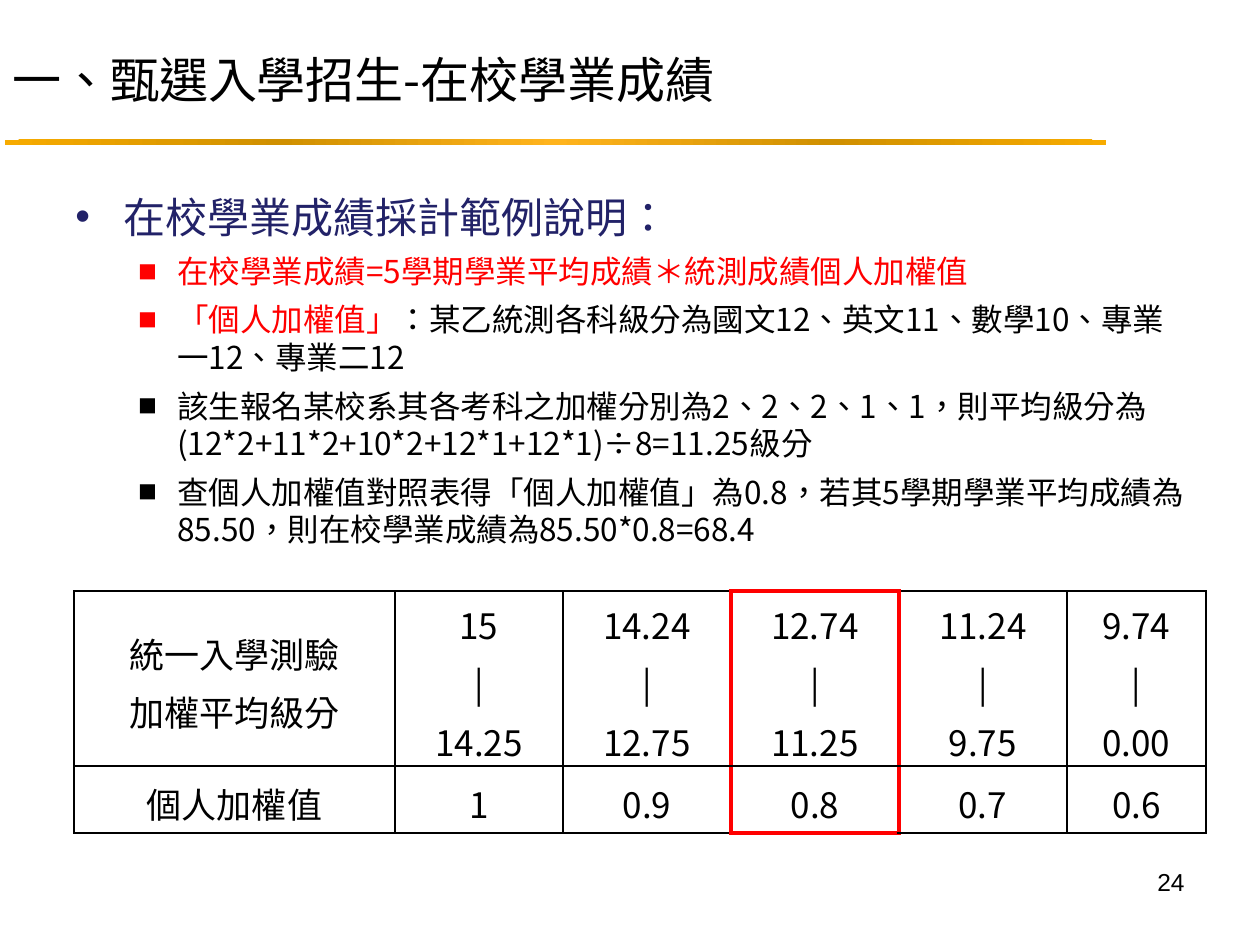
from lxml import etree
from pptx import Presentation
from pptx.dml.color import RGBColor
from pptx.enum.shapes import MSO_SHAPE as Shape
from pptx.enum.text import MSO_ANCHOR as Anchor, PP_ALIGN as Align
from pptx.oxml import parse_xml
from pptx.oxml.ns import nsdecls, qn
from pptx.util import Pt

PX = 914400 // 126
CJK, LATIN = "Noto Sans CJK SC", "Arial"
COLORS = {
    "black": "000000", "red": "FF0000", "navy": "222268",
    "bar_center": "FFB41D", "bar_middle": "D09000", "bar_edge": "F7AB00",
}

# Each point is a list of (text, colour) runs
HEADING = "在校學業成績採計範例說明："
POINTS = [
    [("在校學業成績=5學期學業平均成績＊統測成績個人加權值", "red")],
    [("「個人加權值」", "red"),
     ("：某乙統測各科級分為國文12、英文11、數學10、專業一12、專業二12", "black")],
    [("該生報名某校系其各考科之加權分別為2、2、2、1、1，則平均級分為"
      "(12*2+11*2+10*2+12*1+12*1)÷8=11.25級分", "black")],
    [("查個人加權值對照表得「個人加權值」為0.8，若其5學期學業平均成績為85.50，"
      "則在校學業成績為85.50*0.8=68.4", "black")],
]
ROWS = [
    ["統一入學測驗\n加權平均級分", "15\n|\n14.25", "14.24\n|\n12.75",
     "12.74\n|\n11.25", "11.24\n|\n9.75", "9.74\n|\n0.00"],
    ["個人加權值", "1", "0.9", "0.8", "0.7", "0.6"],
]
COLUMN_WIDTHS = [321, 168, 168, 168, 168, 139]
ROW_HEIGHTS = [175, 67]
MARKED_COLUMN = 3


def px(*lengths):
    return [length * PX for length in lengths]


def style_run(run, size, color="black", font=CJK):
    run.font.size = Pt(size)
    run.font.name = font
    run.font.color.rgb = RGBColor.from_string(COLORS[color])
    properties = run.font._element
    properties.set("lang", "zh-TW")
    etree.SubElement(properties, qn("a:ea")).set("typeface", font)


def add_text_box(slide, box, anchor=Anchor.TOP):
    frame = slide.shapes.add_textbox(*px(*box)).text_frame
    frame.word_wrap = True
    frame.vertical_anchor = anchor
    return frame


def add_line_of_text(slide, box, text, size, font=CJK, align=Align.LEFT, anchor=Anchor.TOP):
    frame = add_text_box(slide, box, anchor)
    frame.text = text
    paragraph = frame.paragraphs[0]
    paragraph.alignment = align
    style_run(paragraph.runs[0], size, font=font)


def add_bar(slide, box):
    bar = slide.shapes.add_shape(Shape.RECTANGLE, *px(*box))
    bar.shadow.inherit = False
    bar.line.fill.background()
    stops = "".join(
        f'<a:gs pos="{position}"><a:srgbClr val="{COLORS[name]}"/></a:gs>'
        for position, name in ((0, "bar_center"), (50000, "bar_middle"), (100000, "bar_edge")))
    gradient = parse_xml(
        f'<a:gradFill {nsdecls("a")}><a:gsLst>{stops}</a:gsLst><a:path path="circle">'
        '<a:fillToRect l="50000" t="50000" r="50000" b="50000"/></a:path></a:gradFill>')
    bar._element.spPr.find(qn("a:prstGeom")).addnext(gradient)


def add_bullet(paragraph, character, font, scale, left, hanging):
    properties = paragraph._p.get_or_add_pPr()
    properties.set("marL", str(left * PX))
    properties.set("indent", str(-hanging * PX))
    for tag, name, value in (("a:buSzPct", "val", str(scale * 1000)),
                             ("a:buFont", "typeface", font),
                             ("a:buChar", "char", character)):
        etree.SubElement(properties, qn(tag)).set(name, value)


def add_body(slide, box):
    frame = add_text_box(slide, box)
    for index, runs in enumerate([[(HEADING, "navy")]] + POINTS):
        paragraph = frame.add_paragraph() if index else frame.paragraphs[0]
        if index:
            add_bullet(paragraph, "■", CJK, 60, 102, 39)
            paragraph.space_before = Pt(6)
        else:
            add_bullet(paragraph, "•", LATIN, 100, 48, 48)
        for text, color in runs:
            run = paragraph.add_run()
            run.text = text
            style_run(run, 18 if index else 24, color)


def set_borders(cell, red_sides):
    properties = cell._tc.get_or_add_tcPr()
    for side in "LRTB":
        color, width = ("red", 3) if side in red_sides else ("black", 1)
        properties.append(parse_xml(
            f'<a:ln{side} {nsdecls("a")} w="{Pt(width)}"><a:solidFill>'
            f'<a:srgbClr val="{COLORS[color]}"/></a:solidFill></a:ln{side}>'))


def red_sides_of(row, column):
    if column == MARKED_COLUMN:
        return "LRT" if row == 0 else "LRB"
    return {MARKED_COLUMN - 1: "R", MARKED_COLUMN + 1: "L"}.get(column, "")


def fill_cell(cell, text, red_sides):
    cell.text = text
    cell.vertical_anchor = Anchor.MIDDLE
    cell.margin_left = cell.margin_right = 9 * PX
    cell.margin_top = cell.margin_bottom = 0
    for paragraph in cell.text_frame.paragraphs:
        paragraph.alignment = Align.CENTER
        paragraph.line_spacing = 1.15
        style_run(paragraph.runs[0], 20)
    set_borders(cell, red_sides)
    cell.fill.background()


def add_score_table(slide, left, top):
    box = px(left, top, sum(COLUMN_WIDTHS), sum(ROW_HEIGHTS))
    table = slide.shapes.add_table(len(ROWS), len(COLUMN_WIDTHS), *box).table
    table.first_row = table.horz_banding = False
    for column, width in zip(table.columns, px(*COLUMN_WIDTHS)):
        column.width = width
    for row, height in zip(table.rows, px(*ROW_HEIGHTS)):
        row.height = height
    for r, texts in enumerate(ROWS):
        for c, text in enumerate(texts):
            fill_cell(table.cell(r, c), text, red_sides_of(r, c))


def main():
    presentation = Presentation()
    presentation.slide_width, presentation.slide_height = px(1260, 945)
    slide = presentation.slides.add_slide(presentation.slide_layouts[6])

    # Title and rule below it
    add_bar(slide, (5, 140, 1101, 5))
    add_line_of_text(slide, (0, 35, 1134, 87), "一、甄選入學招生-在校學業成績", 28,
                     anchor=Anchor.MIDDLE)

    # Worked example and lookup table
    add_body(slide, (63, 185, 1134, 387))
    add_score_table(slide, 74, 591)

    # Slide number
    add_line_of_text(slide, (903, 861, 294, 66), "24", 14, LATIN, Align.RIGHT)

    presentation.save("out.pptx")


if __name__ == "__main__":
    main()
